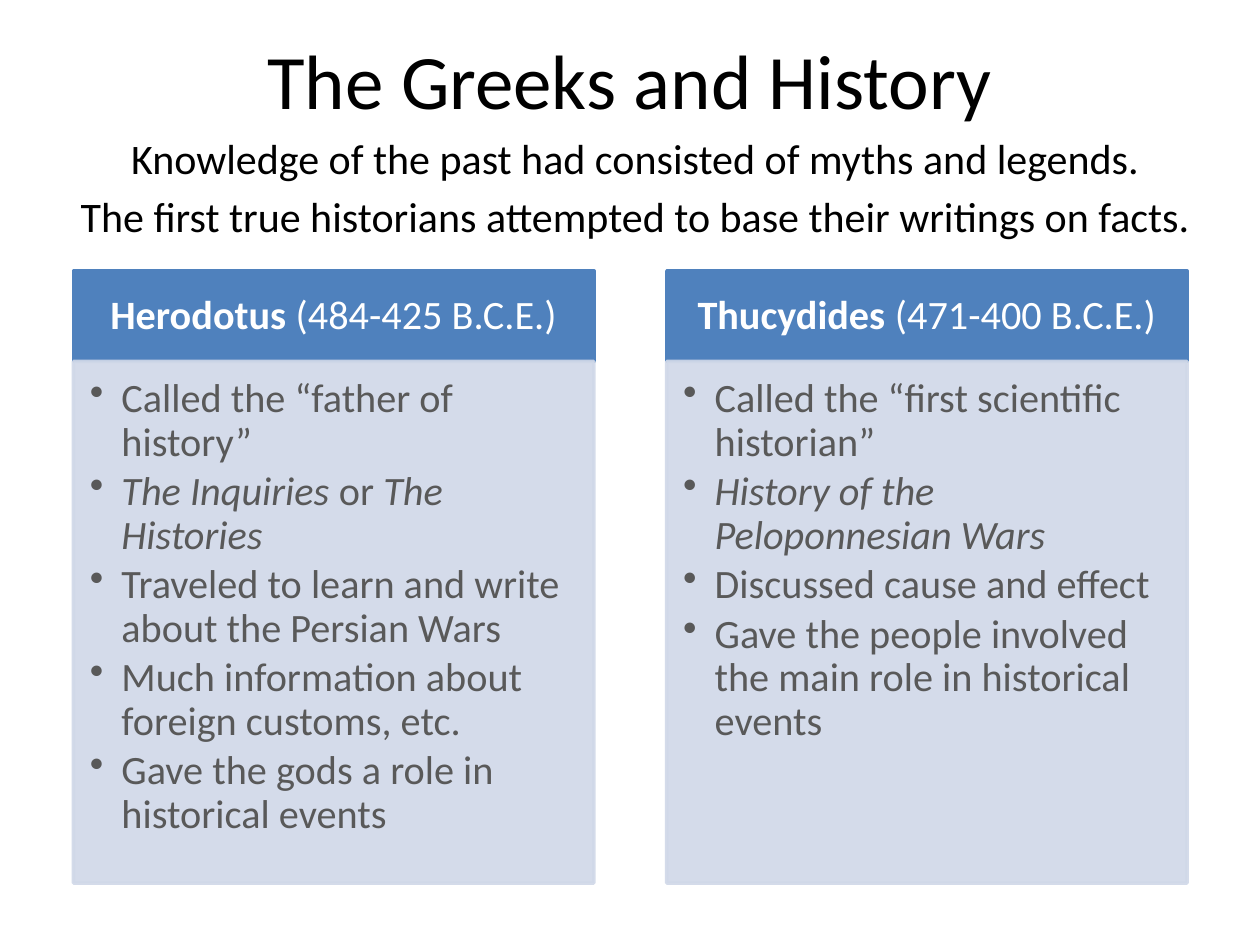
from dataclasses import dataclass

from lxml import etree
from pptx import Presentation, util as u
from pptx.dml.color import RGBColor
from pptx.enum import shapes, text
from pptx.oxml import ns
from pptx.shapes.autoshape import Shape
from pptx.slide import Slide

Pt = u.Pt
BLACK = RGBColor(0x00, 0x00, 0x00)
WHITE = RGBColor(0xFF, 0xFF, 0xFF)
GRAY = RGBColor(0x59, 0x59, 0x59)
BLUE = RGBColor(0x4F, 0x81, 0xBD)
PALE = RGBColor(0xD0, 0xD8, 0xE8)

FONT = "Calibri"
COLUMN_LEFT, COLUMN_STEP, COLUMN_WIDTH = 42, 339, 297.4
HEADER_TOP, HEADER_HEIGHT, LIST_HEIGHT = 154.8, 51.8, 298.1


@dataclass(frozen=True)
class Piece:
    words: str
    bold: bool = False
    italic: bool = False


Line = list[Piece]


@dataclass(frozen=True)
class Historian:
    heading: Line
    facts: list[Line]


HISTORIANS = [
    Historian(
        [Piece("Herodotus", bold=True), Piece(" (484-425 B.C.E.)")],
        [
            [Piece("Called the “father of history”")],
            [Piece("The Inquiries", italic=True), Piece(" or "),
             Piece("The Histories", italic=True)],
            [Piece("Traveled to learn and write about the Persian Wars")],
            [Piece("Much information about foreign customs, etc.")],
            [Piece("Gave the gods a role in historical events")],
        ],
    ),
    Historian(
        [Piece("Thucydides ", bold=True), Piece("(471-400 B.C.E.)")],
        [
            [Piece("Called the “first scientific historian”")],
            [Piece("History of the Peloponnesian Wars", italic=True)],
            [Piece("Discussed cause and effect")],
            [Piece("Gave the people involved the main role in historical events")],
        ],
    ),
]


def write(box: Shape, lines: list[Line], *, size: float, color: RGBColor,
          align=text.PP_ALIGN.CENTER, anchor=text.MSO_ANCHOR.MIDDLE,
          insets: tuple = (7.2, 3.6, 7.2, 3.6), spacing: float = 1.0,
          before: float = 0, after: float = 0,
          hanging: float = 0, bullet: str = "") -> None:
    """Fill a box with formatted lines; lengths are in points."""
    frame = box.text_frame
    frame.word_wrap = True
    frame.vertical_anchor = anchor
    (frame.margin_left, frame.margin_top,
     frame.margin_right, frame.margin_bottom) = map(Pt, insets)
    for index, line in enumerate(lines):
        para = frame.add_paragraph() if index else frame.paragraphs[0]
        para.alignment = align
        para.line_spacing = spacing
        para.space_before, para.space_after = Pt(before), Pt(after)
        properties = para._p.get_or_add_pPr()
        if hanging:
            properties.set("marL", str(Pt(hanging)))
            properties.set("indent", str(-Pt(hanging)))
        if bullet:
            para.level = 1
            etree.SubElement(properties, ns.qn("a:buChar"), char=bullet)
        for piece in line:
            span = para.add_run()
            span.text = piece.words
            span.font.name, span.font.size = FONT, Pt(size)
            span.font.bold, span.font.italic = piece.bold, piece.italic
            span.font.color.rgb = color


def add_text_box(page: Slide, left: float, top: float,
                 width: float, height: float) -> Shape:
    return page.shapes.add_textbox(Pt(left), Pt(top), Pt(width), Pt(height))


def add_panel(page: Slide, left: float, top: float, height: float,
              color: RGBColor, opacity: int = 100) -> Shape:
    """Draw one rectangle of a column, fill and outline alike."""
    panel = page.shapes.add_shape(shapes.MSO_SHAPE.RECTANGLE, Pt(left), Pt(top),
                                  Pt(COLUMN_WIDTH), Pt(height))
    panel.shadow.inherit = False
    panel.fill.solid()
    panel.fill.fore_color.rgb = color
    panel.line.color.rgb = color
    panel.line.width = Pt(2)
    if opacity < 100:
        for shade in panel._element.spPr.iter(ns.qn("a:srgbClr")):
            etree.SubElement(shade, ns.qn("a:alpha"), val=str(opacity * 1000))
    return panel


def add_column(page: Slide, left: float, historian: Historian) -> None:
    header = add_panel(page, left, HEADER_TOP, HEADER_HEIGHT, BLUE)
    write(header, [historian.heading], size=23, color=WHITE,
          insets=(13, 7.2, 13, 7.2), spacing=0.9, after=8)
    facts = add_panel(page, left, HEADER_TOP + HEADER_HEIGHT, LIST_HEIGHT,
                      PALE, opacity=90)
    write(facts, historian.facts, size=23, color=GRAY,
          align=text.PP_ALIGN.LEFT, anchor=text.MSO_ANCHOR.TOP,
          insets=(9.4, 9.4, 13, 14.4), spacing=0.9, after=3.45,
          hanging=18, bullet="•")


def main() -> None:
    deck = Presentation()
    deck.slide_width, deck.slide_height = Pt(720), Pt(540)
    page = deck.slides.add_slide(deck.slide_layouts[6])

    # Title and introduction
    title = add_text_box(page, 36, 0, 648, 90)
    write(title, [[Piece("The Greeks and History")]], size=44, color=BLACK)
    intro = add_text_box(page, 24, 72, 678, 438)
    write(intro, [
        [Piece("Knowledge of the past had consisted of myths and legends.")],
        [Piece("The first true historians attempted to base their writings on facts.")],
    ], size=24, color=BLACK, anchor=text.MSO_ANCHOR.TOP, before=4.8, hanging=27)

    # One column per historian
    for index, historian in enumerate(HISTORIANS):
        add_column(page, COLUMN_LEFT + index * COLUMN_STEP, historian)

    deck.save("out.pptx")


if __name__ == "__main__":
    main()
